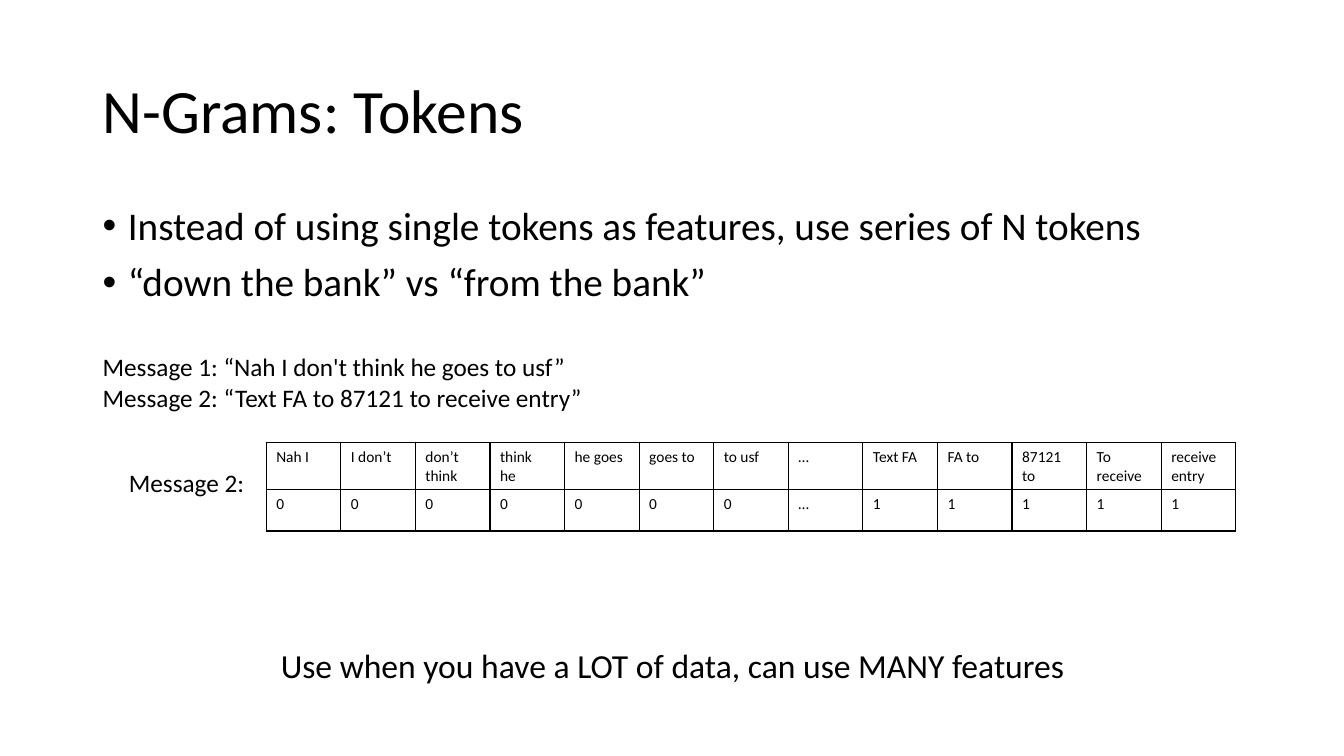
from lxml import etree
from pptx import Presentation, util as u
from pptx.dml.color import RGBColor
from pptx.enum import text
from pptx.oxml.ns import qn

BLACK = RGBColor(0x00, 0x00, 0x00)
FONT = "Calibri"
MARGIN, CONTENT_WIDTH = 0.92, 11.5
COLUMN, ROW = 0.74, 0.41

deck = Presentation()
deck.slide_width, deck.slide_height = u.Inches(13.33), u.Inches(7.5)
slide = deck.slides.add_slide(deck.slide_layouts[6])


def style(paragraph, size):
    paragraph.font.name = FONT
    paragraph.font.size = u.Pt(size)
    paragraph.font.color.rgb = BLACK


def add_text(lines, left, top, width, height, size, spacing=None, before=0, wrap=True):
    """Add a text box with one paragraph per line and return its text frame."""
    frame = slide.shapes.add_textbox(*map(u.Inches, (left, top, width, height))).text_frame
    frame.word_wrap = wrap
    frame.text = "\n".join(lines)
    for paragraph in frame.paragraphs:
        style(paragraph, size)
        paragraph.line_spacing = spacing
        paragraph.space_before = u.Pt(before)
    return frame


title = add_text(["N-Grams: Tokens"], MARGIN, 0.4, CONTENT_WIDTH, 1.45, 44, spacing=0.9)
title.vertical_anchor = text.MSO_ANCHOR.MIDDLE

points = add_text(
    ["Instead of using single tokens as features, use series of N tokens",
     "“down the bank” vs “from the bank”"],
    MARGIN, 2, CONTENT_WIDTH, 4.76, 28, spacing=0.9, before=10)
for point in points.paragraphs:
    properties = point._p.get_or_add_pPr()
    properties.set("marL", str(u.Inches(0.25)))
    properties.set("indent", str(-u.Inches(0.25)))
    etree.SubElement(properties, qn("a:buFont"), typeface="Arial")
    etree.SubElement(properties, qn("a:buChar"), char="•")

add_text(["Message 1: “Nah I don't think he goes to usf”",
          "Message 2: “Text FA to 87121 to receive entry”"],
         MARGIN, 3.44, 10.09, 1.01, 18)

bigrams = ["Nah I", "I don’t", "don’t\nthink", "think\nhe", "he goes", "goes to", "to usf",
           "…", "Text FA", "FA to", "87121 to", "To receive", "receive entry"]
counts = ["0"] * 7 + ["…"] + ["1"] * 5

features = slide.shapes.add_table(
    2, len(bigrams), u.Inches(2.64), u.Inches(4.39),
    u.Inches(COLUMN * len(bigrams)), u.Inches(ROW * 2)).table
features.first_row = features.horz_banding = False
for column in features.columns:
    column.width = u.Inches(COLUMN)
for r, values in enumerate([bigrams, counts]):
    features.rows[r].height = u.Inches(ROW)
    for c, value in enumerate(values):
        cell = features.cell(r, c)
        cell.text = value
        for paragraph in cell.text_frame.paragraphs:
            style(paragraph, 11)
        cell_properties = cell._tc.get_or_add_tcPr()
        for side in ("a:lnL", "a:lnR", "a:lnT", "a:lnB"):
            border = etree.SubElement(cell_properties, qn(side), w=str(u.Pt(1)))
            border_fill = etree.SubElement(border, qn("a:solidFill"))
            etree.SubElement(border_fill, qn("a:srgbClr"), val=str(BLACK))
        cell.fill.background()

add_text(["Message 2:"], 1.18, 4.59, 1.36, 0.4, 18, wrap=False)

advice = add_text(["Use when you have a LOT of data, can use MANY features"],
                  MARGIN, 6.39, CONTENT_WIDTH, 0.57, 24, spacing=0.9, before=10)
advice.paragraphs[0].alignment = text.PP_ALIGN.CENTER

deck.save("out.pptx")
